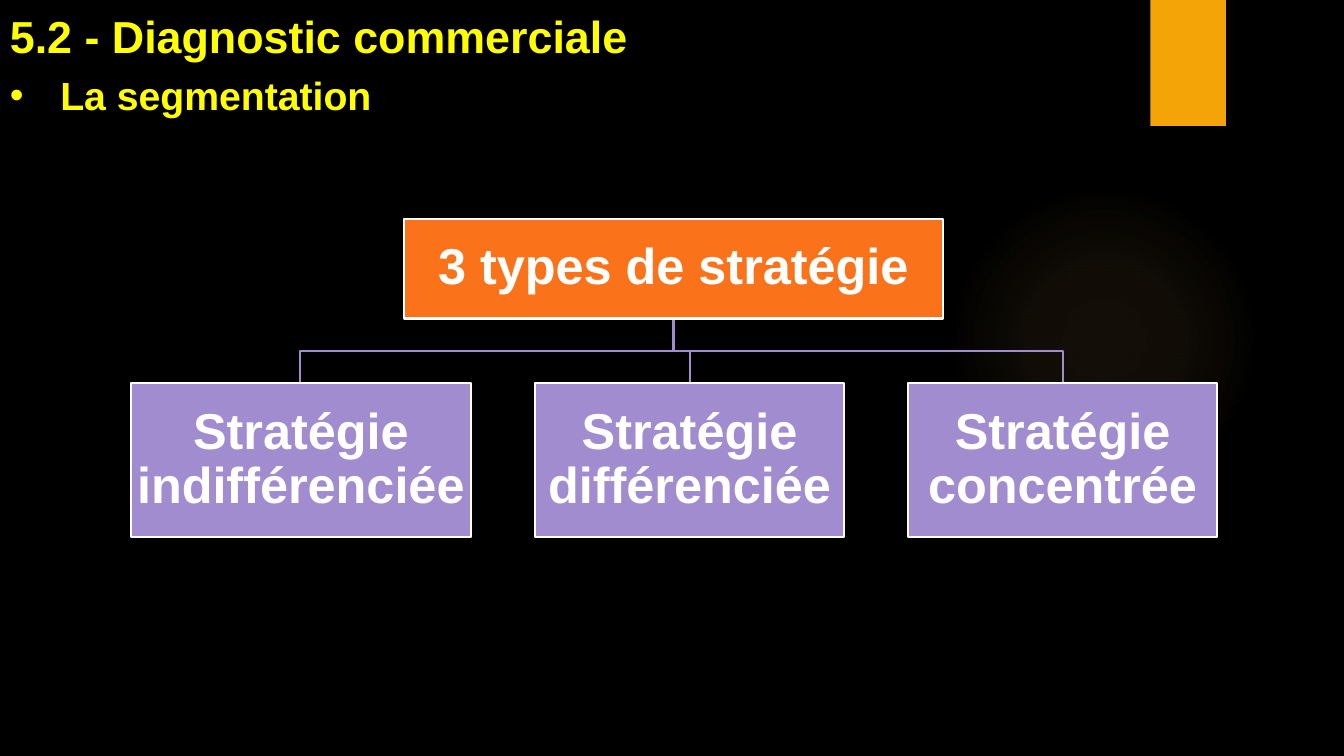
from dataclasses import dataclass
from lxml import etree
from pptx import Presentation
from pptx import util as u
from pptx.dml.color import RGBColor
from pptx.enum import shapes, text
from pptx.oxml import parse_xml
from pptx.oxml.ns import nsdecls, qn

PX = 9144


@dataclass(frozen=True)
class Theme:
    font: str = "Arial"
    background: str = "000000"
    heading: str = "FFFF00"
    tab: str = "F5A408"
    glow: str = "FAC96A"
    root: str = "FA731A"
    branch: str = "A18CD0"
    label: str = "FFFFFF"
    title_size: int = 32
    subtitle_size: int = 28
    label_size: int = 36
    line_width: float = 1.5


THEME = Theme()


def px(length):
    return u.Emu(round(length * PX))


def rgb(color):
    return RGBColor.from_string(color)


def style_font(paragraph, size, color):
    font = paragraph.font
    font.name = THEME.font
    font.size = u.Pt(size)
    font.bold = True
    font.color.rgb = rgb(color)


def add_filled(slide, kind, box, color):
    shape = slide.shapes.add_shape(kind, *map(px, box))
    shape.shadow.inherit = False
    shape.fill.solid()
    shape.fill.fore_color.rgb = rgb(color)
    shape.line.fill.background()
    return shape


def add_glow(slide, box):
    shape = add_filled(slide, shapes.MSO_SHAPE.OVAL, box, THEME.glow)
    stops = "".join(
        f'<a:gs pos="{position * 1000}"><a:srgbClr val="{THEME.glow}">'
        f'<a:alpha val="{opacity * 1000}"/></a:srgbClr></a:gs>'
        for position, opacity in ((0, 7), (36, 6), (69, 0), (100, 0))
    )
    gradient = parse_xml(
        f'<a:gradFill {nsdecls("a")}><a:gsLst>{stops}</a:gsLst><a:path path="circle">'
        '<a:fillToRect l="50000" t="50000" r="50000" b="50000"/></a:path></a:gradFill>'
    )
    properties = shape._element.spPr
    properties.replace(properties.find(qn("a:solidFill")), gradient)


def add_backdrop(slide):
    slide.background.fill.solid()
    slide.background.fill.fore_color.rgb = rgb(THEME.background)
    add_glow(slide, (941, 183, 308, 308))
    add_filled(slide, shapes.MSO_SHAPE.RECTANGLE, (1141, 0, 75, 125), THEME.tab)


def add_node(slide, box, label, color):
    shape = add_filled(slide, shapes.MSO_SHAPE.RECTANGLE, box, color)
    shape.line.color.rgb = rgb(THEME.label)
    shape.line.width = u.Pt(THEME.line_width)
    frame = shape.text_frame
    frame.word_wrap = True
    frame.vertical_anchor = text.MSO_ANCHOR.MIDDLE
    frame.margin_left = frame.margin_right = px(3)
    frame.margin_top = frame.margin_bottom = px(3)
    frame.text = label
    paragraph = frame.paragraphs[0]
    paragraph.alignment = text.PP_ALIGN.CENTER
    paragraph.line_spacing = 0.9
    style_font(paragraph, THEME.label_size, THEME.label)


def add_elbow(slide, start, end):
    middle = (start[1] + end[1]) // 2
    builder = slide.shapes.build_freeform(*start, scale=PX)
    builder.add_line_segments([(start[0], middle), (end[0], middle), end], close=False)
    shape = builder.convert_to_shape()
    shape.shadow.inherit = False
    shape.fill.background()
    shape.line.color.rgb = rgb(THEME.branch)
    shape.line.width = u.Pt(THEME.line_width)


def add_hierarchy(slide, box, root, branches):
    left, top, width, height = box
    root_width, root_height, branch_height, gap = 534, 99, 153, 64
    root_left = left + (width - root_width) // 2
    root_foot = (left + width // 2, top + root_height)
    branch_top = top + height - branch_height
    nodes = []
    for label, branch_width in branches:
        nodes.append((label, (left, branch_top, branch_width, branch_height)))
        left += branch_width + gap
    for label, node in nodes:
        add_elbow(slide, root_foot, (node[0] + node[2] // 2, branch_top))
    add_node(slide, (root_left, top, root_width, root_height), root, THEME.root)
    for label, node in nodes:
        add_node(slide, node, label, THEME.branch)


def add_heading(slide, box, title, subtitle):
    frame = slide.shapes.add_textbox(*map(px, box)).text_frame
    frame.word_wrap = True
    frame.margin_top = px(9)
    frame.text = title
    heading = frame.paragraphs[0]
    heading.space_after = u.Pt(3)
    style_font(heading, THEME.title_size, THEME.heading)
    item = frame.add_paragraph()
    item.text = subtitle
    item.space_before = item.space_after = u.Pt(3)
    properties = item._p.get_or_add_pPr()
    properties.set("marL", str(px(50)))
    properties.set("indent", str(px(-50)))
    etree.SubElement(properties, qn("a:buFont"), typeface=THEME.font)
    etree.SubElement(properties, qn("a:buChar"), char="•")
    style_font(item, THEME.subtitle_size, THEME.heading)


def main():
    presentation = Presentation()
    presentation.slide_width = px(1333)
    presentation.slide_height = px(750)
    slide = presentation.slides.add_slide(presentation.slide_layouts[6])
    add_backdrop(slide)
    add_hierarchy(
        slide,
        (130, 217, 1077, 316),
        "3 types de stratégie",
        (
            ("Stratégie indifférenciée", 337),
            ("Stratégie différenciée", 306),
            ("Stratégie concentrée", 306),
        ),
    )
    add_heading(slide, (0, 0, 1290, 119), "5.2 - Diagnostic commerciale", "La segmentation")
    presentation.save("out.pptx")


if __name__ == "__main__":
    main()
